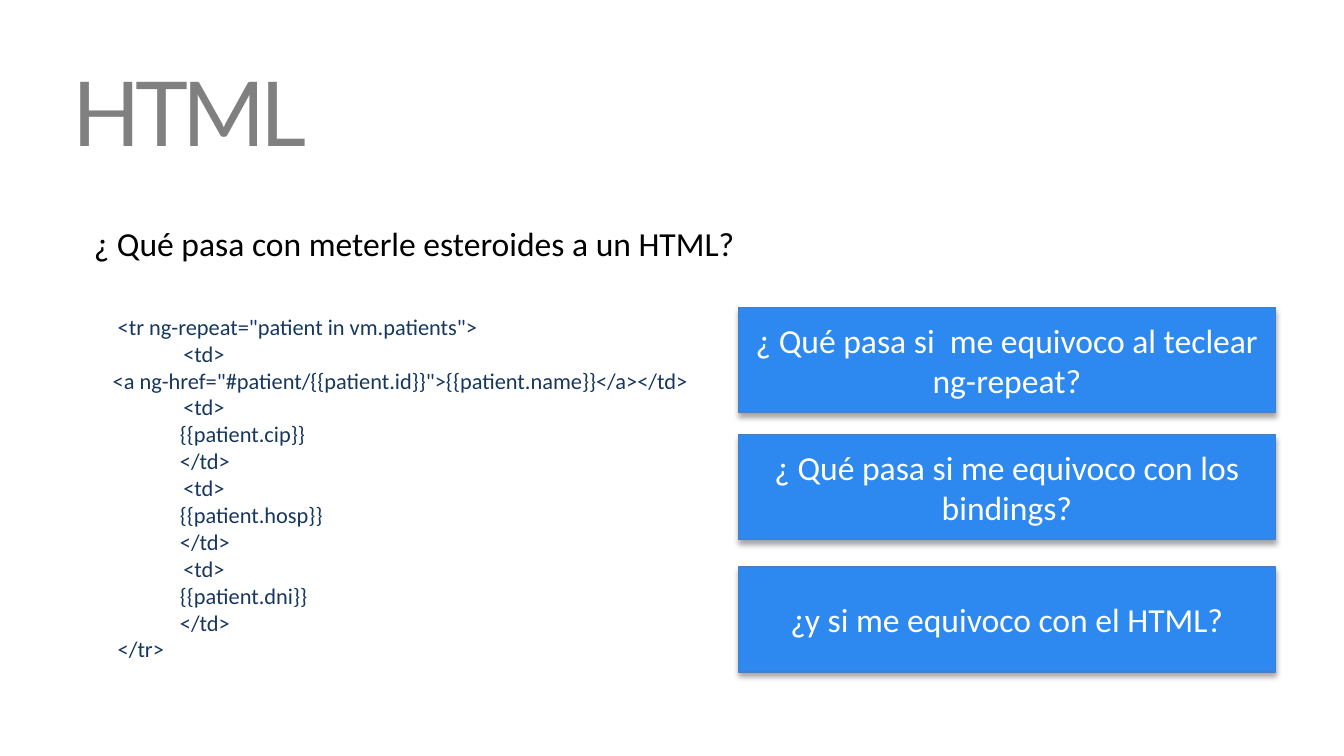
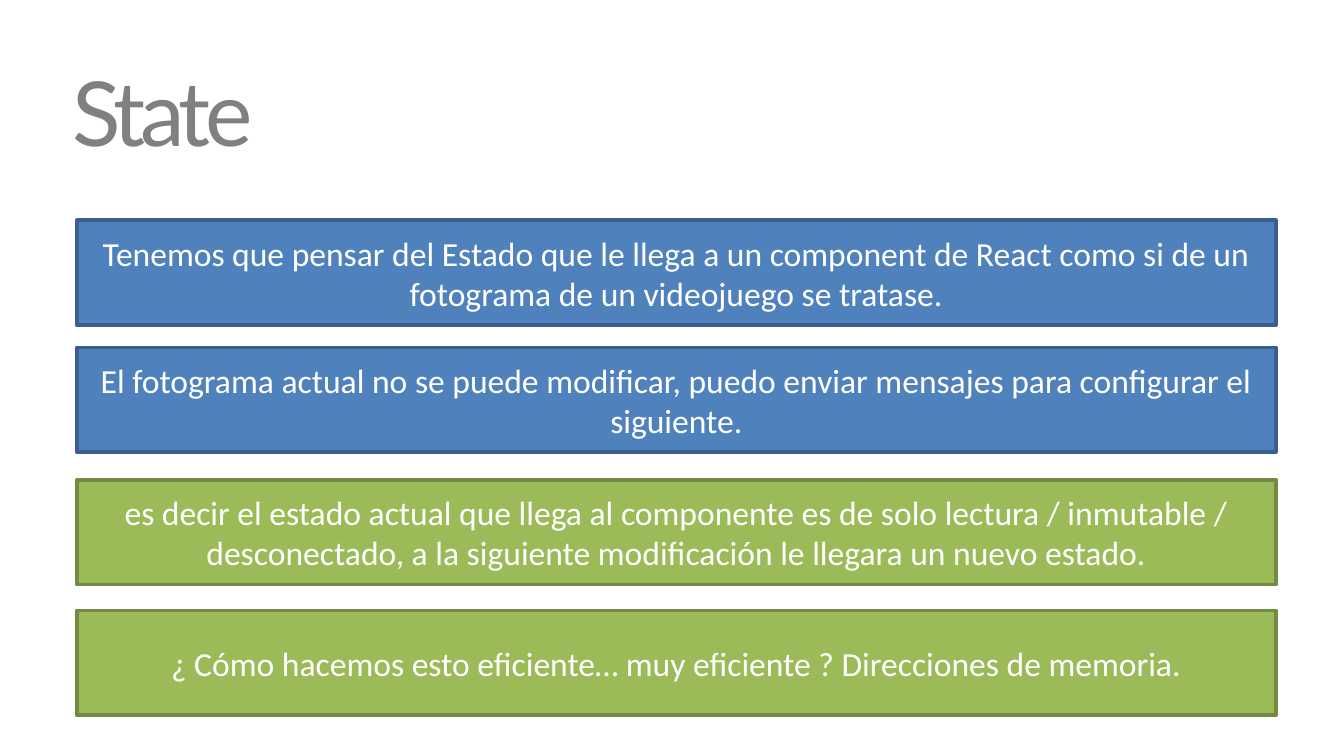
from dataclasses import dataclass

from lxml import etree
from pptx import Presentation
from pptx.dml.color import RGBColor
from pptx.enum.shapes import MSO_SHAPE
from pptx.enum.text import MSO_ANCHOR, MSO_AUTO_SIZE, PP_ALIGN
from pptx.oxml.ns import qn
from pptx.util import Inches, Pt

RECT = MSO_SHAPE.RECTANGLE
MIDDLE, TOP = MSO_ANCHOR.MIDDLE, MSO_ANCHOR.TOP
CENTER, LEFT = PP_ALIGN.CENTER, PP_ALIGN.LEFT
GROW = MSO_AUTO_SIZE.SHAPE_TO_FIT_TEXT


@dataclass(frozen=True)
class Theme:
    title_font: str = "Lato"
    body_font: str = "Calibri"
    title_size: int = 48
    body_size: int = 18
    code_size: int = 12
    title_color: str = "808080"
    text_color: str = "000000"
    code_color: str = "17375E"
    box_text: str = "FFFFFF"


@dataclass(frozen=True)
class BoxStyle:
    fill: str
    line: str
    width: float
    shadow: bool = False


THEME = Theme()
BRIGHT = BoxStyle("2D89EF", "4B7EBC", 0.75, shadow=True)
BLUE = BoxStyle("4F81BD", "3A5F8C", 2)
GREEN = BoxStyle("9BBB59", "738A42", 2)

# Slide size in inches (16:9); positions below are percentages of it
WIDTH = 10
HEIGHT = WIDTH * 9 / 16
BOX_HEIGHT = 13.87
BOX_ROWS = (0, 16.8, 34.3, 51.6)
TAB_STOP = Inches(0.5)

CODE = """ <tr ng-repeat="patient in vm.patients">
              <td>
<a ng-href="#patient/{{patient.id}}">{{patient.name}}</a></td>
              <td>
\t{{patient.cip}}
\t</td>
              <td>
\t{{patient.hosp}}
\t</td>
              <td>
\t{{patient.dni}}
\t</td>
 </tr>"""


def area(x, y, w, h):
    """Turn percentages of the slide into a position and a size."""
    return (Inches(WIDTH * x / 100), Inches(HEIGHT * y / 100),
            Inches(WIDTH * w / 100), Inches(HEIGHT * h / 100))


def write(sp, text, size, color, font=THEME.body_font, align=LEFT, anchor=TOP):
    tf = sp.text_frame
    tf.word_wrap = True
    tf.vertical_anchor = anchor
    tf.text = text
    for p in tf.paragraphs:
        p.alignment = align
        for r in p.runs:
            r.font.name = font
            r.font.size = Pt(size)
            r.font.color.rgb = RGBColor.from_string(color)
    return tf


def add_text(slide, frame, text, size, color, **options):
    sp = slide.shapes.add_textbox(*area(*frame))
    return write(sp, text, size, color, **options)


def add_title(slide, text):
    tf = add_text(slide, (4.45, 5.93, 90, 17.42), text, THEME.title_size,
                  THEME.title_color, font=THEME.title_font, anchor=MIDDLE)
    tf.paragraphs[0].runs[0].font._element.set("spc", "-300")


def add_code(slide, frame, text):
    tf = add_text(slide, frame, text, THEME.code_size, THEME.code_color)
    tf.auto_size = GROW
    for p in tf.paragraphs:
        tabs = etree.SubElement(p._p.get_or_add_pPr(), qn("a:tabLst"))
        etree.SubElement(tabs, qn("a:tab"), pos=str(TAB_STOP), algn="l")


def add_shadow(sp):
    effects = sp._element.spPr.find(qn("a:effectLst"))
    shadow = etree.SubElement(effects, qn("a:outerShdw"), blurRad=str(Pt(3.1)),
                              dist=str(Pt(1.8)), dir="5400000", rotWithShape="0")
    color = etree.SubElement(shadow, qn("a:srgbClr"), val="000000")
    etree.SubElement(color, qn("a:alpha"), val="35000")


def add_box(slide, frame, text, style):
    sp = slide.shapes.add_shape(RECT, *area(*frame))
    sp.shadow.inherit = False
    sp.fill.solid()
    sp.fill.fore_color.rgb = RGBColor.from_string(style.fill)
    sp.line.color.rgb = RGBColor.from_string(style.line)
    sp.line.width = Pt(style.width)
    if style.shadow:
        add_shadow(sp)
    write(sp, text, THEME.body_size, THEME.box_text, align=CENTER, anchor=MIDDLE)


def add_box_stack(slide, x, y, w, boxes):
    for offset, (text, style) in zip(BOX_ROWS, boxes):
        add_box(slide, (x, y + offset, w, BOX_HEIGHT), text, style)


def new_slide(prs, title):
    slide = prs.slides.add_slide(prs.slide_layouts[6])
    add_title(slide, title)
    return slide


def build_html(prs):
    slide = new_slide(prs, "HTML")
    tf = add_text(slide, (6, 28.62, 92.5, 7.11),
                  "¿ Qué pasa con meterle esteroides a un HTML?",
                  THEME.body_size, THEME.text_color)
    tf.auto_size = GROW
    add_code(slide, (7.4, 40.53, 45.8, 48.53), CODE)
    add_box_stack(slide, 54.95, 40.71, 39.95, [
        ("¿ Qué pasa si  me equivoco al teclear ng-repeat?", BRIGHT),
        ("¿ Qué pasa si me equivoco con los bindings?", BRIGHT),
        ("¿y si me equivoco con el HTML?", BRIGHT),
    ])


def build_state(prs):
    slide = new_slide(prs, "State")
    add_box_stack(slide, 5.72, 29.16, 89.2, [
        ("Tenemos que pensar del Estado que le llega a un component de React "
         "como si de un fotograma de un videojuego se tratase.", BLUE),
        ("El fotograma actual no se puede modificar, puedo enviar mensajes "
         "para configurar el siguiente.", BLUE),
        ("es decir el estado actual que llega al componente es de solo lectura "
         "/ inmutable / desconectado, a la siguiente modificación le llegara "
         "un nuevo estado.", GREEN),
        ("¿ Cómo hacemos esto eficiente… muy eficiente ? Direcciones de "
         "memoria.", GREEN),
    ])


def main():
    prs = Presentation()
    prs.slide_width, prs.slide_height = Inches(WIDTH), Inches(HEIGHT)
    build_html(prs)
    build_state(prs)
    prs.save("out.pptx")


if __name__ == "__main__":
    main()
